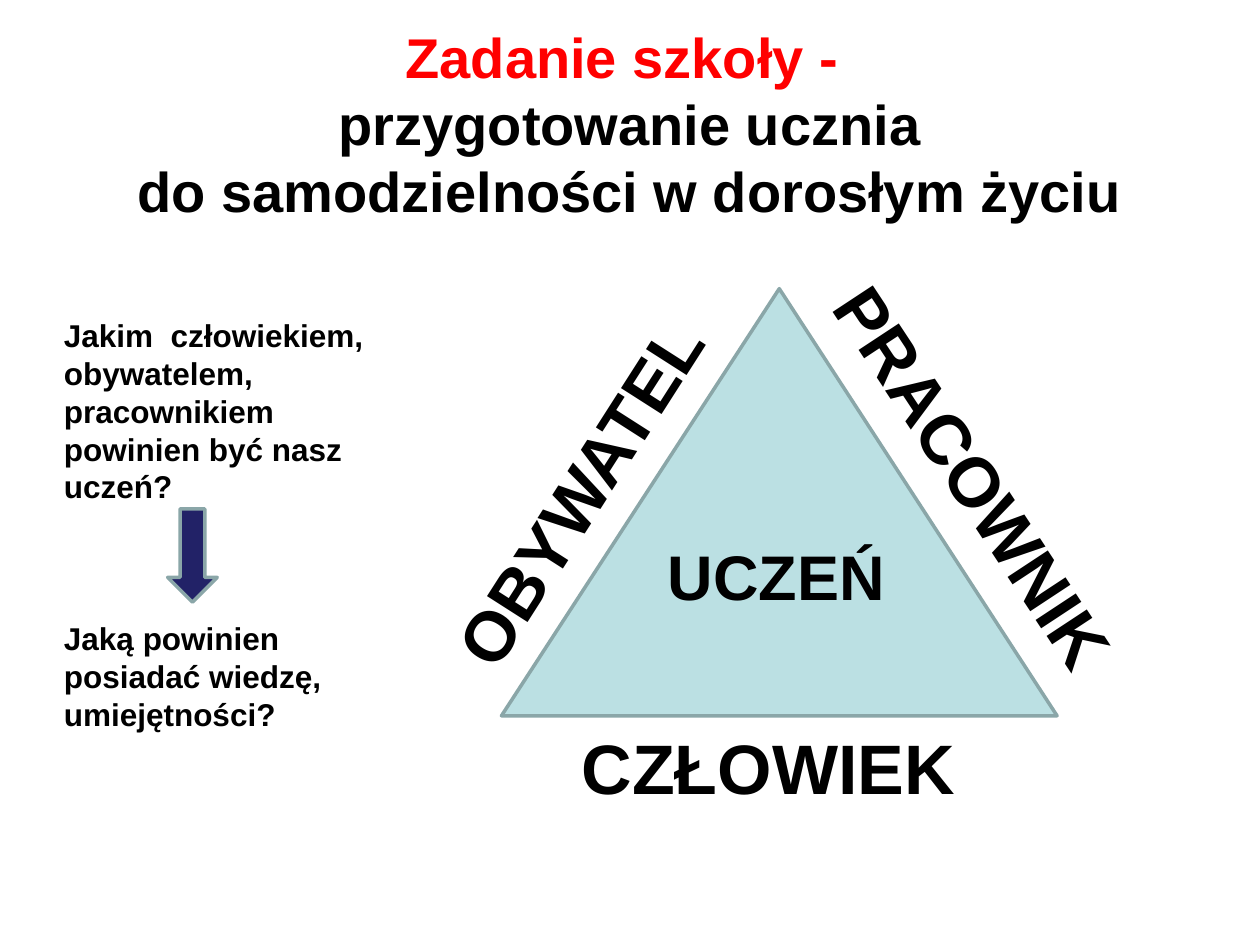
from pptx import Presentation
from pptx.dml.color import RGBColor
from pptx.enum.shapes import MSO_SHAPE
from pptx.enum.text import PP_ALIGN
from pptx.util import Cm, Pt

BLACK = RGBColor(0x00, 0x00, 0x00)
RED = RGBColor(0xFF, 0x00, 0x00)
LIGHT_TEAL = RGBColor(0xBB, 0xE0, 0xE3)
NAVY = RGBColor(0x22, 0x22, 0x67)
GREY_TEAL = RGBColor(0x8A, 0xA6, 0xA8)


def add_text(box, lines, size, alignment=PP_ALIGN.LEFT):
    """Add a text box with one bold paragraph per line and return its paragraphs."""
    shape = slide.shapes.add_textbox(*[Cm(length) for length in box[:4]])
    shape.rotation = box[4]
    text_frame = shape.text_frame
    text_frame.word_wrap = True
    text_frame.text = "\n".join(lines)
    for paragraph in text_frame.paragraphs:
        paragraph.alignment = alignment
        font = paragraph.runs[0].font
        font.name = "Arial"
        font.size = Pt(size)
        font.bold = True
        font.color.rgb = BLACK
    return text_frame.paragraphs


presentation = Presentation()
presentation.slide_width = Cm(25.4)
presentation.slide_height = Cm(19.05)
slide = presentation.slides.add_slide(presentation.slide_layouts[6])

# Triangle and arrow
for preset, box, fill_color in [
    (MSO_SHAPE.ISOSCELES_TRIANGLE, (10.11, 5.82, 11.2, 8.61), LIGHT_TEAL),
    (MSO_SHAPE.DOWN_ARROW, (3.38, 10.26, 1, 1.88), NAVY),
]:
    shape = slide.shapes.add_shape(preset, *[Cm(length) for length in box])
    shape.shadow.inherit = False
    shape.fill.solid()
    shape.fill.fore_color.rgb = fill_color
    shape.line.color.rgb = GREY_TEAL
    shape.line.width = Pt(2)

# Labels around and inside the triangle: left, top, width, height, rotation
for label, box, size in [
    ("CZŁOWIEK", (11.48, 14.48, 8.46, 1.95, 0), 40),
    ("OBYWATEL", (7.42, 8.89, 8.56, 1.93, 302.6), 40),
    ("PRACOWNIK", (14.96, 8.66, 9.42, 1.93, 56.7), 40),
    ("UCZEŃ", (13.21, 10.72, 5.31, 1.8, 0), 36),
]:
    add_text(box, [label], size)

# Title
title = add_text(
    (0.3, 0.33, 24.8, 4.37, 0),
    ["Zadanie szkoły - ", "przygotowanie ucznia", "do samodzielności w dorosłym życiu"],
    32,
    PP_ALIGN.CENTER,
)
title[0].runs[0].font.color.rgb = RED

# Questions, with room for the arrow before the second one
questions = add_text(
    (1.04, 6.25, 6.78, 8.71, 0),
    [
        "Jakim  człowiekiem, obywatelem, pracownikiem",
        "powinien być nasz uczeń?",
        "Jaką powinien posiadać wiedzę,",
        "umiejętności?",
    ],
    18,
)
questions[2].space_before = Pt(65)

presentation.save("out.pptx")
